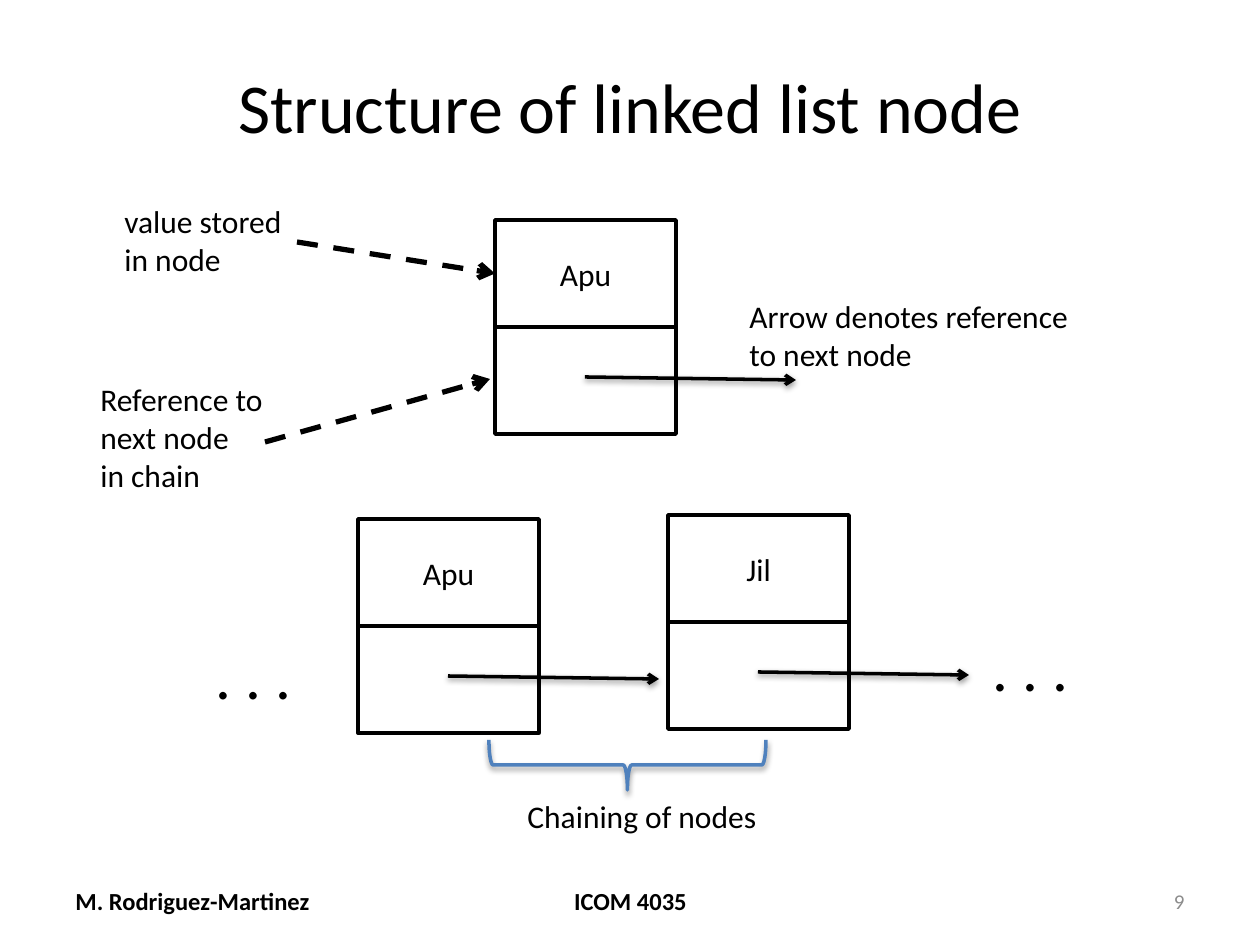
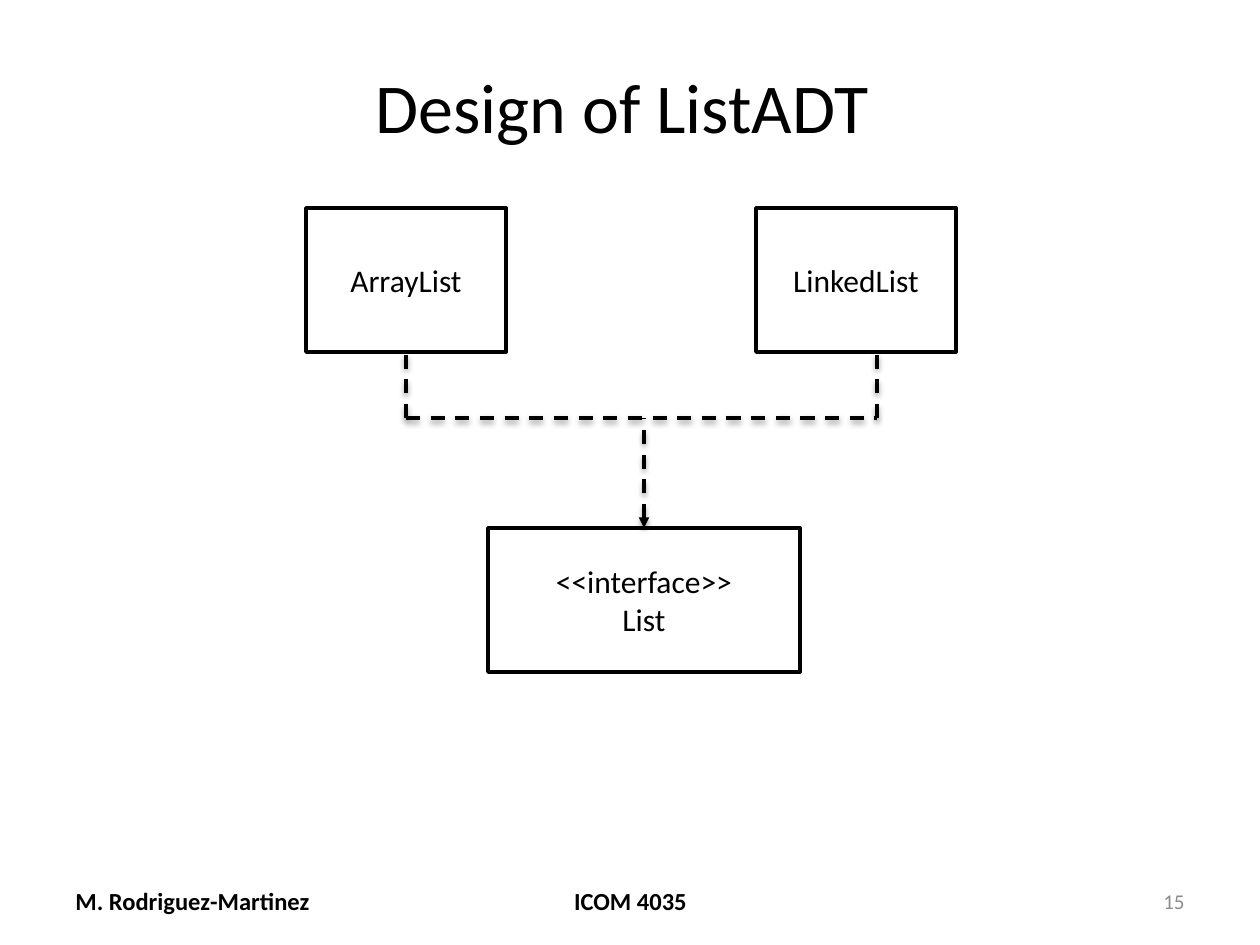
from dataclasses import dataclass

from lxml.etree import SubElement
from pptx import Presentation
from pptx.dml.color import RGBColor
from pptx.enum.dml import MSO_LINE_DASH_STYLE as Dash
from pptx.enum.shapes import MSO_CONNECTOR as Connector, MSO_SHAPE as Preset
from pptx.enum.text import MSO_ANCHOR as Anchor, PP_ALIGN as Align
from pptx.oxml.ns import qn
from pptx.util import Emu, Pt

PX_PER_INCH = 126
LEFT_SIDE, TOP_SIDE, BOTTOM_SIDE = 1, 0, 2


@dataclass(frozen=True)
class Theme:
    font: str = "Calibri"
    ink: str = "000000"
    paper: str = "FFFFFF"
    accent: str = "4F81BD"
    muted: str = "8C8C8C"
    title: int = 40
    dots: int = 36
    body: int = 18
    footer: int = 14
    number: int = 12
    thin: int = 2
    thick: int = 3


THEME = Theme()


def px(*lengths):
    """Turn pixel lengths into EMU."""
    return [Emu(round(length * 914400 / PX_PER_INCH)) for length in lengths]


def rgb(code):
    return RGBColor.from_string(code)


def write(frame, text, size=THEME.body, color=THEME.ink, bold=False,
          align=Align.LEFT, anchor=Anchor.TOP, wrap=True):
    """Fill a text frame, one paragraph for each line of the text."""
    frame.word_wrap = wrap
    frame.vertical_anchor = anchor
    for index, line in enumerate(text.split("\n")):
        para = frame.add_paragraph() if index else frame.paragraphs[0]
        para.alignment = align
        span = para.add_run()
        span.text = line
        span.font.name = THEME.font
        span.font.size = Pt(size)
        span.font.bold = bold
        span.font.color.rgb = rgb(color)


def label(page, text, box, **text_format):
    frame = page.shapes.add_textbox(*px(*box)).text_frame
    write(frame, text, **text_format)


def set_line(shape, color=THEME.ink, width=THEME.thin):
    shape.line.color.rgb = rgb(color)
    shape.line.width = Pt(width)


def set_effects(shape, shadow):
    """Replace the inherited effects by a soft drop shadow or by none."""
    effects = SubElement(shape._element.spPr, qn("a:effectLst"))
    if shadow:
        outer = SubElement(effects, qn("a:outerShdw"), blurRad="40000",
                           dist="20000", dir="5400000", rotWithShape="0")
        black = SubElement(outer, qn("a:srgbClr"), val=THEME.ink)
        SubElement(black, qn("a:alpha"), val="38000")


def add_line(shapes, start, end, width=THEME.thin, dashed=False,
             head=None, tail=None, shadow=True):
    line = shapes.add_connector(Connector.STRAIGHT, *px(*start, *end))
    set_line(line, width=width)
    if dashed:
        line.line.dash_style = Dash.DASH
    stroke = line.line._get_or_add_ln()
    for tag, kind in (("a:headEnd", head), ("a:tailEnd", tail)):
        if kind:
            SubElement(stroke, qn(tag), type=kind)
    set_effects(line, shadow)
    return line


def add_box(shapes, box, text=""):
    rect = shapes.add_shape(Preset.RECTANGLE, *px(*box))
    rect.shadow.inherit = False
    rect.fill.solid()
    rect.fill.fore_color.rgb = rgb(THEME.paper)
    set_line(rect)
    if text:
        write(rect.text_frame, text, align=Align.CENTER, anchor=Anchor.MIDDLE)
    return rect


def add_node(page, left, top, value):
    """Draw a value cell over a reference cell and return the value cell."""
    width, height = 181, 107
    shapes = page.shapes.add_group_shape().shapes
    value_cell = add_box(shapes, (left, top, width, height), value)
    add_box(shapes, (left, top + height, width, height))
    add_line(shapes, (left + 90, top + 157), (left + 301, top + 160), tail="arrow")
    return value_cell


def add_brace(page, left, top, width, height):
    """Draw a brace that opens upward and spans the given box."""
    shift = (width - height) / 2
    brace = page.shapes.add_shape(
        Preset.LEFT_BRACE, *px(left + shift, top - shift, height, width))
    brace.rotation = 270
    brace.fill.background()
    set_line(brace, THEME.accent)
    set_effects(brace, shadow=True)


def add_footer(page, number):
    top, height = 876, 50
    footer = dict(size=THEME.footer, bold=True, anchor=Anchor.MIDDLE)
    label(page, "M. Rodriguez-Martinez", (63, top, 294, height), **footer)
    label(page, "ICOM 4035", (431, top, 399, height), align=Align.CENTER, **footer)
    label(page, str(number), (903, top, 294, height), size=THEME.number,
          color=THEME.muted, align=Align.RIGHT, anchor=Anchor.MIDDLE)


def add_page(deck, title, number):
    page = deck.slides.add_slide(deck.slide_layouts[5])
    holder = page.shapes.title
    holder.left, holder.top, holder.width, holder.height = px(63, 38, 1134, 135)
    write(holder.text_frame, title, size=THEME.title,
          align=Align.CENTER, anchor=Anchor.MIDDLE)
    add_footer(page, number)
    return page


def single_node(page, left, top):
    """Draw one node with its explanations around it."""
    value_cell = add_node(page, left, top, "Apu")
    label(page, "value stored\nin node", (left - 383, top - 24, 185, 89), wrap=False)
    label(page, "Reference to\nnext node\nin chain",
          (left - 407, top + 154, 192, 127), wrap=False)
    label(page, "Arrow denotes reference\nto next node",
          (left + 242, top + 71, 350, 89), wrap=False)
    pointer = dict(width=THEME.thick, dashed=True, tail="arrow", shadow=False)
    to_value = add_line(page.shapes, (left - 198, top + 22), (left, top + 53), **pointer)
    to_value.end_connect(value_cell, LEFT_SIDE)
    add_line(page.shapes, (left - 230, top + 222), (left - 5, top + 159), **pointer)


def node_chain(page, left, top):
    """Draw two chained nodes between dots, with a brace below."""
    add_node(page, left, top, "Apu")
    add_node(page, left + 310, top - 4, "Jil")
    for dots_left, dots_top in ((left - 155, top + 111), (left + 622, top + 103)):
        label(page, ". . .", (dots_left, dots_top, 102, 89),
              size=THEME.dots, wrap=False)
    add_brace(page, left + 131, top + 221, 277, 50)
    label(page, "Chaining of nodes", (left + 157, top + 272, 257, 50), wrap=False)


def class_diagram(page, left, top):
    """Draw two classes joined by a dashed bus to their interface."""
    width, height = 200, 144
    bus = top + 210
    bus_left, bus_right, bus_middle = left + 100, left + 571, left + 338
    shapes = page.shapes
    array_list = add_box(shapes, (left, top, width, height), "ArrayList")
    add_box(shapes, (left + 450, top, width, height), "LinkedList")
    interface = add_box(shapes, (left + 182, top + 320, 312, height),
                        "<<interface>>\nList")
    add_line(shapes, (bus_left, bus), (bus_right, bus), dashed=True)
    drops = [add_line(shapes, (x, bus), (x, top + height), dashed=True)
             for x in (bus_left, bus_right)]
    drops[0].end_connect(array_list, BOTTOM_SIDE)
    arrow = add_line(shapes, (bus_middle, top + 320), (bus_middle, bus),
                     dashed=True, head="triangle")
    arrow.begin_connect(interface, TOP_SIDE)


def main():
    deck = Presentation()
    deck.slide_width, deck.slide_height = px(1260, 945)

    page = add_page(deck, "Structure of linked list node", 9)
    single_node(page, 495, 220)
    node_chain(page, 358, 519)

    page = add_page(deck, "Design of ListADT ", 15)
    class_diagram(page, 306, 208)

    deck.save("out.pptx")


if __name__ == "__main__":
    main()
